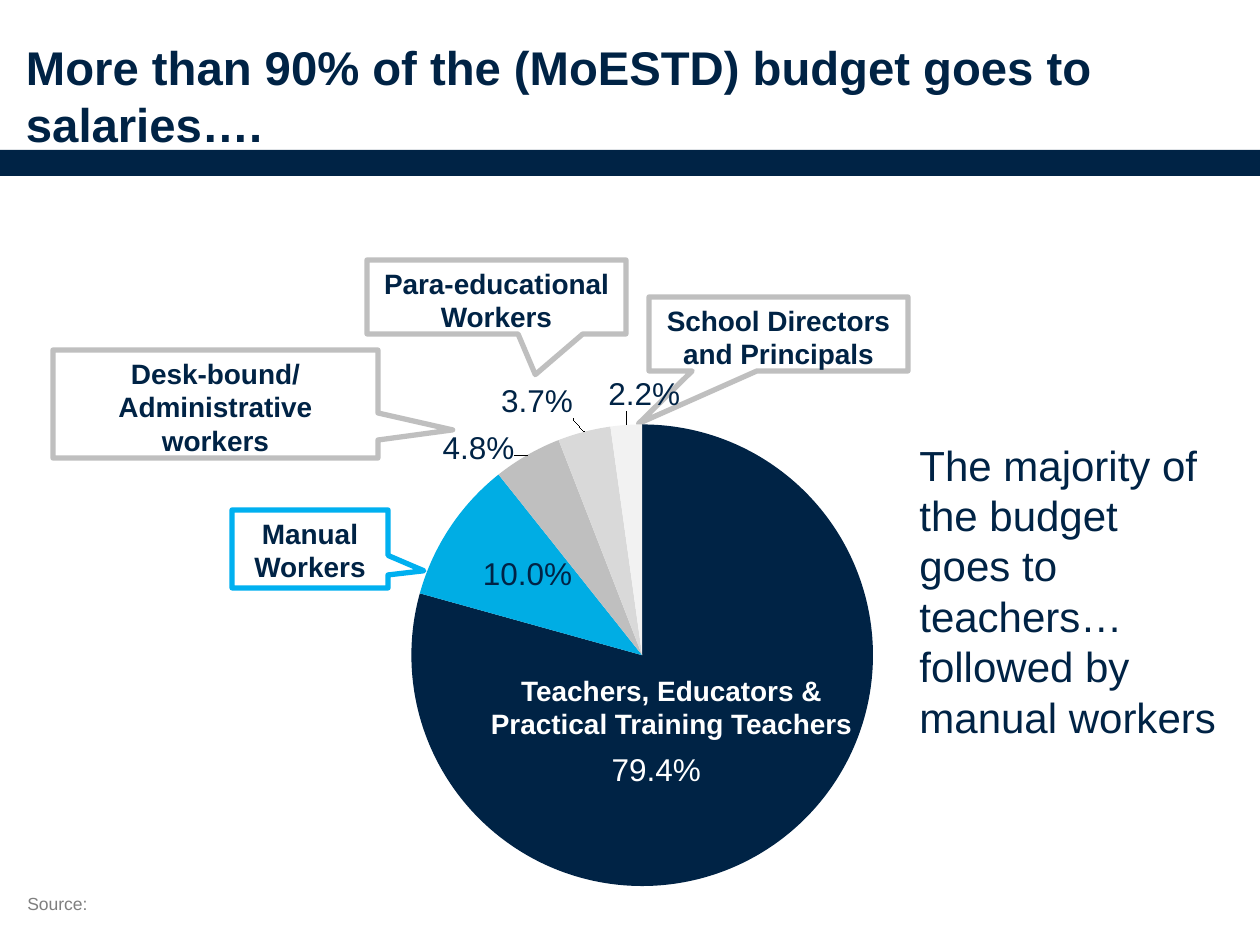
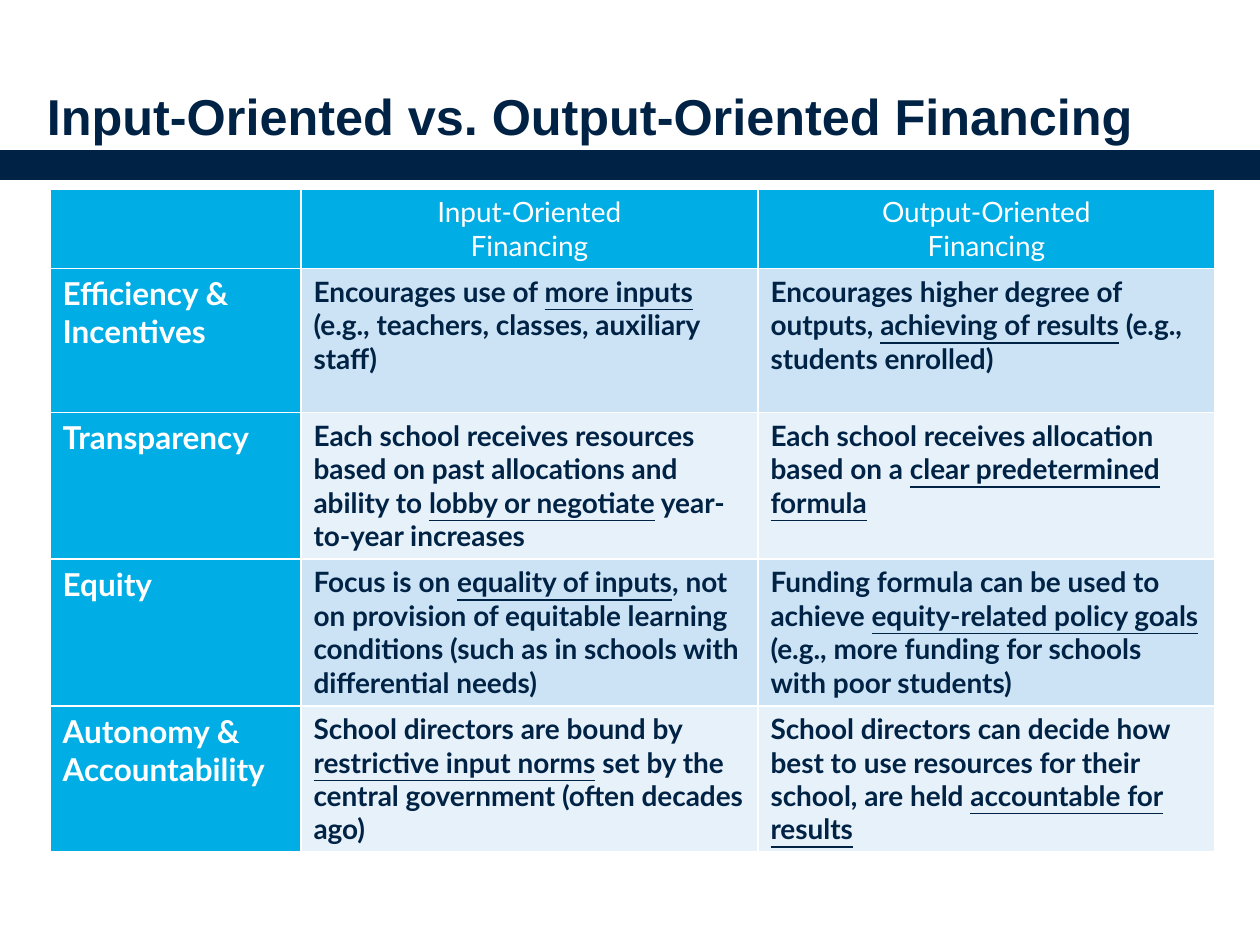
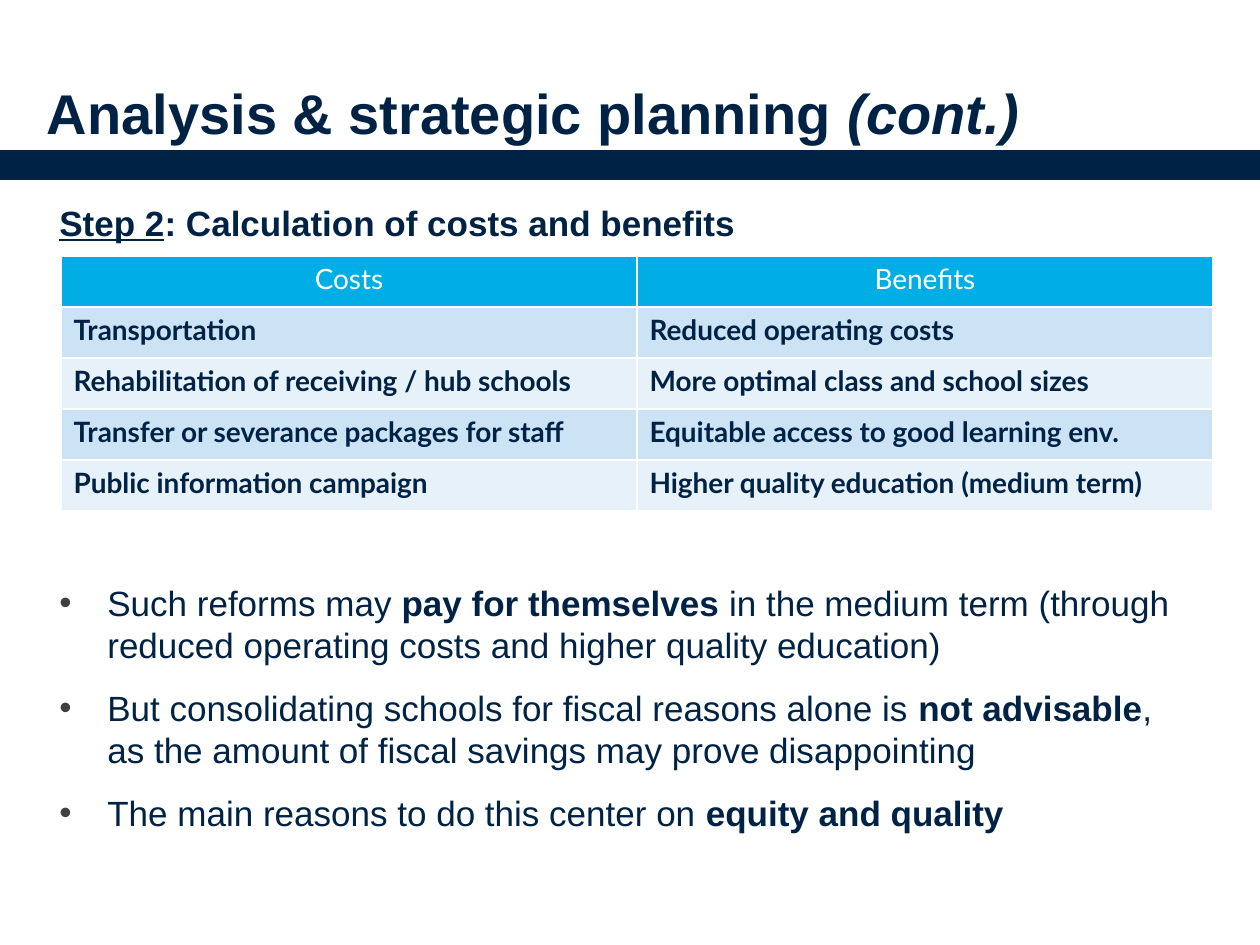
from lxml import etree
from pptx import Presentation
from pptx.chart.data import CategoryChartData
from pptx.dml.color import RGBColor
from pptx.enum.chart import XL_CHART_TYPE, XL_LABEL_POSITION
from pptx.enum.shapes import MSO_SHAPE
from pptx.enum.text import MSO_ANCHOR, MSO_AUTO_SIZE, PP_ALIGN
from pptx.oxml import parse_xml
from pptx.oxml.ns import nsdecls, qn
from pptx.util import Emu, Pt

LEFT, CENTER = PP_ALIGN.LEFT, PP_ALIGN.CENTER
RECT, CALLOUT = MSO_SHAPE.RECTANGLE, MSO_SHAPE.RECTANGULAR_CALLOUT
LABEL_CENTER, LABEL_OUTSIDE = XL_LABEL_POSITION.CENTER, XL_LABEL_POSITION.OUTSIDE_END
SCALE = 914400 / 126
WIDTH, HEIGHT = 1260, 945
COLORS = {
    "navy": "002345", "cyan": "00ADE4", "manual": "00B0F0", "white": "FFFFFF",
    "grey": "BFBFBF", "light": "D9D9D9", "pale": "F2F2F2", "source": "7F7F7F",
    "bullet": "404040", "band_dark": "CCE3F5", "band_light": "E7F1FA",
}
UNDERLINE, BOLD, ITALIC = {"underline": True}, {"bold": True}, {"italic": True}


def px(n):
    return Emu(round(n * SCALE))


def box(x, y, w, h):
    return px(x), px(y), px(w), px(h)


def rgb(name):
    return RGBColor.from_string(COLORS[name])


# Shared text, title and band
def set_font(font, name="Arial", size=16, color="navy", **fmt):
    for key, value in {"name": name, "size": Pt(size), **fmt}.items():
        setattr(font, key, value)
    font.color.rgb = rgb(color)


def write(tf, lines, emphasis=None, align=LEFT, **fmt):
    """Fill a text frame; parts between bars take the emphasis format."""
    tf.word_wrap = True
    for i, line in enumerate(lines):
        p = tf.paragraphs[0] if i == 0 else tf.add_paragraph()
        p.alignment = align
        for j, text in enumerate(line.split("|")):
            if text:
                r = p.add_run()
                r.text = text
                set_font(r.font, **{**fmt, **(emphasis if j % 2 else {})})


def add_text(slide, area, lines, **fmt):
    tf = slide.shapes.add_textbox(*box(*area)).text_frame
    write(tf, lines, **fmt)
    return tf


def new_slide(prs, title, area, size, band_height, emphasis=None):
    slide = prs.slides.add_slide(prs.slide_layouts[5])
    sp = slide.shapes.add_shape(RECT, *box(0, 150, WIDTH, band_height))
    sp.shadow.inherit = False
    sp.fill.solid()
    sp.fill.fore_color.rgb = rgb("navy")
    sp.line.fill.background()

    sp = slide.shapes.title
    sp.left, sp.top, sp.width, sp.height = box(*area)
    tf = sp.text_frame
    for side in ("left", "top", "right", "bottom"):
        setattr(tf, f"margin_{side}", 0)
    tf.auto_size = MSO_AUTO_SIZE.NONE
    tf.vertical_anchor = MSO_ANCHOR.BOTTOM
    write(tf, [title], emphasis, size=size, bold=True)
    return slide


# Tables
def set_borders(cell):
    tcPr = cell._tc.get_or_add_tcPr()
    for i, side in enumerate(("lnL", "lnR", "lnT", "lnB")):
        tcPr.insert(i, parse_xml(
            f'<a:{side} {nsdecls("a")} w="12700"><a:solidFill>'
            f'<a:srgbClr val="{COLORS["white"]}"/></a:solidFill></a:{side}>'))


def add_table(slide, x, y, widths, heights, rows, row_heads=False):
    area = box(x, y, sum(widths), sum(heights))
    table = slide.shapes.add_table(len(rows), len(widths), *area).table
    for col, width in zip(table.columns, widths):
        col.width = px(width)
    for row, height in zip(table.rows, heights):
        row.height = px(height)
    for i, row in enumerate(rows):
        for j, text in enumerate(row):
            cell = table.cell(i, j)
            row_head = row_heads and j == 0
            head = i == 0 or row_head
            cell.fill.solid()
            fill = "cyan" if head else "band_dark" if i % 2 else "band_light"
            cell.fill.fore_color.rgb = rgb(fill)
            set_borders(cell)
            write(cell.text_frame, text.split("\n"), UNDERLINE,
                  align=LEFT if i else CENTER, name="Lato",
                  size=18 if row_head else 16, bold=i > 0,
                  color="white" if head else "navy")


# Pie chart and its callouts
def place_label(label, dx, dy):
    dLbl = label._dLbl
    layout = parse_xml(
        f'<c:layout {nsdecls("c")}><c:manualLayout><c:x val="{dx}"/>'
        f'<c:y val="{dy}"/></c:manualLayout></c:layout>')
    number = parse_xml(f'<c:numFmt {nsdecls("c")} formatCode="0.0%" sourceLinked="0"/>')
    dLbl.find(qn("c:idx")).addnext(layout)
    layout.addnext(number)


def add_pie(slide, area):
    # share, fill, label colour, label position, label offset
    slices = [
        (0.794, "navy", "white", LABEL_CENTER, (-0.06, 0.04)),
        (0.1, "cyan", "navy", LABEL_CENTER, (-0.02, -0.03)),
        (0.048, "grey", "navy", LABEL_OUTSIDE, (-0.01, 0.03)),
        (0.037, "light", "navy", LABEL_OUTSIDE, (-0.01, -0.01)),
        (0.022, "pale", "navy", LABEL_OUTSIDE, (0.02, -0.01)),
    ]
    data = CategoryChartData(number_format="0.0%")
    data.categories = [str(i + 1) for i in range(len(slices))]
    data.add_series("Series 1", [s[0] for s in slices])
    chart = slide.shapes.add_chart(XL_CHART_TYPE.PIE, *box(*area), data).chart
    chart.has_title = chart.has_legend = False
    set_font(chart.font, size=10)
    plot = chart.plots[0]
    plot.vary_by_categories = True
    plot.has_data_labels = True
    labels = plot.data_labels
    labels.show_value = True
    labels.number_format, labels.number_format_is_linked = "0.0%", False
    set_font(labels.font, size=18)
    for i, (_, fill, color, position, offset) in enumerate(slices):
        point = plot.series[0].points[i]
        point.format.fill.solid()
        point.format.fill.fore_color.rgb = rgb(fill)
        point.format.line.fill.background()
        set_font(point.data_label.font, size=18, color=color)
        point.data_label.position = position
        place_label(point.data_label, *offset)

    # Fixed plot area on a clear background
    root = chart._chartSpace
    plot_area = root.find(".//" + qn("c:plotArea"))
    for old in plot_area.findall(qn("c:layout")):
        plot_area.remove(old)
    layout = etree.Element(qn("c:layout"))
    manual = etree.SubElement(layout, qn("c:manualLayout"))
    for tag, value in (("layoutTarget", "inner"), ("xMode", "edge"), ("yMode", "edge"),
                       ("x", "0.255"), ("y", "0.191"), ("w", "0.498"), ("h", "0.808")):
        etree.SubElement(manual, qn("c:" + tag)).set("val", value)
    plot_area.insert(0, layout)
    root.find(qn("c:chart")).addnext(parse_xml(
        f'<c:spPr {nsdecls("c", "a")}><a:noFill/><a:ln><a:noFill/></a:ln></c:spPr>'))


def add_callout(slide, area, text, tip, color="grey"):
    sp = slide.shapes.add_shape(CALLOUT, *box(*area))
    sp.shadow.inherit = False
    sp.fill.background()
    sp.line.color.rgb = rgb(color)
    sp.line.width = Pt(3)
    sp.adjustments[0], sp.adjustments[1] = tip
    sp.text_frame.vertical_anchor = MSO_ANCHOR.TOP
    write(sp.text_frame, [text], align=CENTER, bold=True)


def budget_slide(prs):
    slide = new_slide(prs, "More than 90% of the (MoESTD) budget goes to salaries….",
                      (26, 0, 1201, 152), 27, 26)
    add_callout(slide, (649, 297, 259, 74), "School Directors and Principals",
                (-0.54, 1.21))
    add_pie(slide, (175, 315, 927, 572))
    add_callout(slide, (232, 510, 156, 78), "Manual Workers", (0.73, 0.28), "manual")
    add_text(slide, (476, 667, 391, 81),
             ["Teachers, Educators & Practical Training Teachers"],
             align=CENTER, bold=True, color="white")
    add_callout(slide, (53, 350, 325, 108), "Desk-bound/Administrative workers",
                (0.73, 0.24))
    add_callout(slide, (367, 260, 259, 74), "Para-educational Workers", (0.15, 1.05))
    add_text(slide, (15, 887, 217, 34), ["Source:"], size=10, color="source")
    add_text(slide, (907, 433, 323, 318),
             ["The majority of the budget goes to teachers… followed by manual workers"],
             size=24)


def financing_slide(prs):
    slide = new_slide(prs, "Input-Oriented vs. Output-Oriented Financing",
                      (47, 42, 1165, 104), 28.8, 30)
    rows = [
        ("", "Input-Oriented\nFinancing", "Output-Oriented\nFinancing"),
        ("Efficiency &\nIncentives",
         "Encourages use of |more inputs| (e.g., teachers, classes, auxiliary staff)",
         "Encourages higher degree of outputs, |achieving of results| "
         "(e.g., students enrolled)"),
        ("Transparency",
         "Each school receives resources based on past allocations and ability to "
         "|lobby or negotiate| year-to-year increases",
         "Each school receives allocation based on a |clear predetermined formula|"),
        ("Equity",
         "Focus is on |equality of inputs|, not on provision of equitable learning "
         "conditions (such as in schools with differential needs)",
         "Funding formula can be used to achieve |equity-related policy goals| "
         "(e.g., more funding for schools with poor students)"),
        ("Autonomy &\nAccountability",
         "School directors are bound by |restrictive input norms| set by the central "
         "government (often decades ago)",
         "School directors can decide how best to use resources for their school, "
         "are held |accountable for results|"),
    ]
    add_table(slide, 50, 189, (251, 457, 457), (79, 144, 146, 147, 146), rows, True)


def add_bullets(slide, area, lines):
    tf = add_text(slide, area, lines, emphasis=BOLD, size=20)
    for p in tf.paragraphs:
        p.space_after = Pt(12)
        pPr = p._p.get_or_add_pPr()
        pPr.set("marL", str(px(48)))
        pPr.set("indent", str(-px(48)))
        color = etree.SubElement(pPr, qn("a:buClr"))
        etree.SubElement(color, qn("a:srgbClr")).set("val", COLORS["bullet"])
        etree.SubElement(pPr, qn("a:buFont")).set("typeface", "Arial")
        etree.SubElement(pPr, qn("a:buChar")).set("char", "•")


def planning_slide(prs):
    slide = new_slide(prs, "Analysis & strategic planning |(cont.)|",
                      (47, 42, 1165, 104), 32, 30, ITALIC)
    add_text(slide, (47, 195, 1157, 55), ["|Step 2|: Calculation of costs and benefits"],
             emphasis=UNDERLINE, size=20, bold=True)
    rows = [
        ("Costs", "Benefits"),
        ("Transportation", "Reduced operating costs"),
        ("Rehabilitation of receiving / hub schools",
         "More optimal class and school sizes"),
        ("Transfer or severance packages for staff",
         "Equitable access to good learning env."),
        ("Public information campaign", "Higher quality education (medium term)"),
    ]
    add_table(slide, 61, 256, [576] * 2, [51] * len(rows), rows)
    add_bullets(slide, (47, 575, 1157, 270), [
        "Such reforms may| pay for themselves |in the medium term (through reduced "
        "operating costs and higher quality education)",
        "But consolidating schools for fiscal reasons alone is |not advisable|, as the "
        "amount of fiscal savings may prove disappointing",
        "The main reasons to do this center on |equity and quality|",
    ])


def main():
    prs = Presentation()
    prs.slide_width, prs.slide_height = px(WIDTH), px(HEIGHT)
    for build in (budget_slide, financing_slide, planning_slide):
        build(prs)
    prs.save("out.pptx")


if __name__ == "__main__":
    main()
